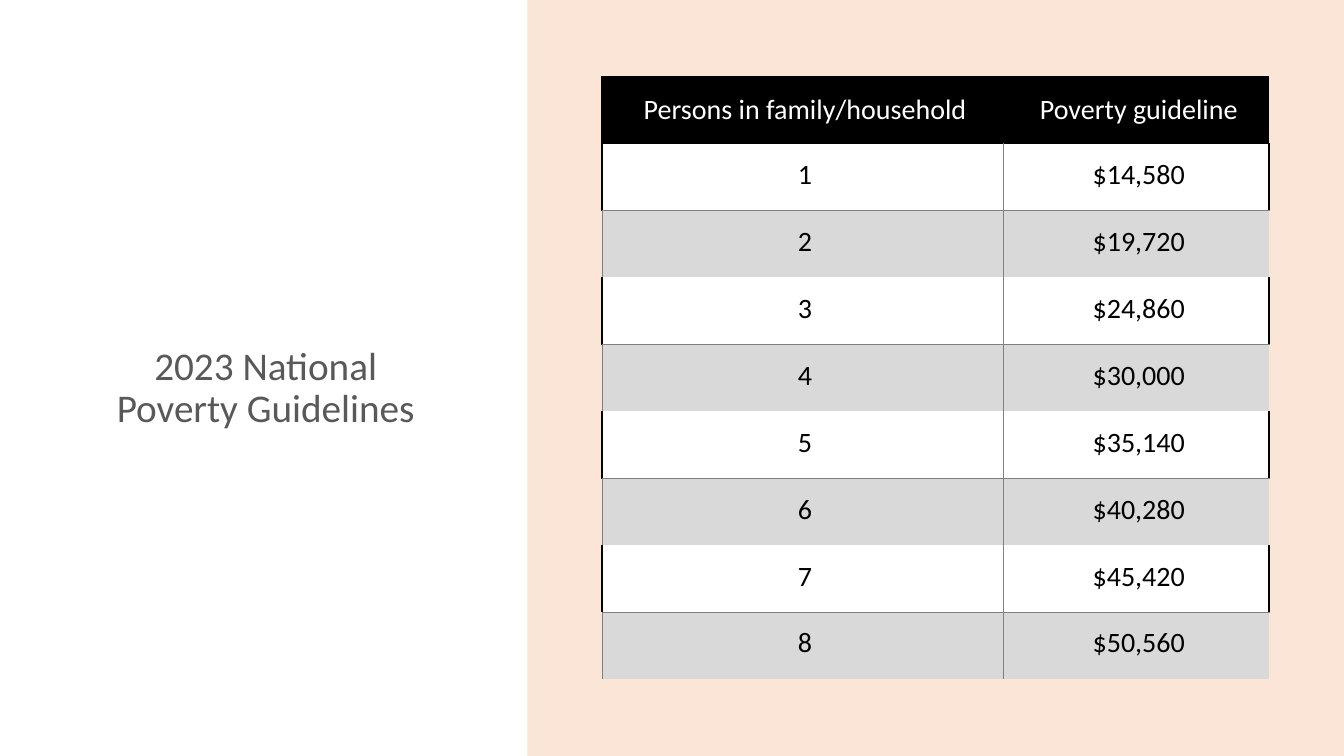
"""Build the 2023 National Poverty Guidelines slide."""
from lxml import etree
from pptx import Presentation
from pptx import util as u
from pptx.dml.color import RGBColor
from pptx.enum import shapes, text
from pptx.oxml.ns import qn

THEME = {
    "font": "Calibri", "title_size": 28, "table_size": 20,
    "title": "595959", "panel": "FBE5D6", "black": "000000",
    "white": "FFFFFF", "band": "D9D9D9", "grid": "808080",
}
THICK, THIN = (THEME["black"], 1.5), (THEME["grid"], 0.5)
NO_STYLE = "{2D5ABB26-0587-4C30-8999-92F81FD0307C}"
HEADERS = ("Persons in family/household", "Poverty guideline")
GUIDELINES = ("$14,580", "$19,720", "$24,860", "$30,000",
              "$35,140", "$40,280", "$45,420", "$50,560")
COLUMN_WIDTHS = (3.98, 2.64)
TABLE_HEIGHT = 5.98


def add_run(paragraph, words, size, color):
    paragraph.alignment = text.PP_ALIGN.CENTER
    run = paragraph.add_run()
    run.text = words
    run.font.name = THEME["font"]
    run.font.size = u.Pt(size)
    run.font.color.rgb = RGBColor.from_string(color)


def set_borders(cell, borders):
    properties = cell._tc.get_or_add_tcPr()
    for side in "LRTB":
        line = etree.SubElement(properties, qn(f"a:ln{side}"))
        if side in borders:
            color, width = borders[side]
            line.set("w", str(u.Pt(width)))
            fill = etree.SubElement(line, qn("a:solidFill"))
            etree.SubElement(fill, qn("a:srgbClr"), val=color)
        else:
            etree.SubElement(line, qn("a:noFill"))


presentation = Presentation()
presentation.slide_width = u.Inches(13.33)
presentation.slide_height = u.Inches(7.5)
slide = presentation.slides.add_slide(presentation.slide_layouts[5])

title = slide.shapes.title
title.left, title.top = u.Inches(1.02), u.Inches(0.74)
title.width, title.height = u.Inches(3.23), u.Inches(3.59)
title.text_frame.word_wrap = True
title.text_frame.vertical_anchor = text.MSO_ANCHOR.BOTTOM
title_paragraph = title.text_frame.paragraphs[0]
title_paragraph.line_spacing = 0.9
add_run(title_paragraph, "2023 National Poverty Guidelines",
        THEME["title_size"], THEME["title"])

panel_left = u.Inches(5.23)
panel = slide.shapes.add_shape(
    shapes.MSO_SHAPE.RECTANGLE, panel_left, 0,
    presentation.slide_width - panel_left, presentation.slide_height)
panel.shadow.inherit = False
panel.fill.solid()
panel.fill.fore_color.rgb = RGBColor.from_string(THEME["panel"])
panel.line.fill.background()

rows = [HEADERS] + [(str(n), amount) for n, amount in enumerate(GUIDELINES, 1)]
table = slide.shapes.add_table(
    len(rows), len(HEADERS), u.Inches(5.97), u.Inches(0.76),
    u.Inches(sum(COLUMN_WIDTHS)), u.Inches(TABLE_HEIGHT)).table
table._tbl.tblPr.find(qn("a:tableStyleId")).text = NO_STYLE
table.horz_banding = False
for column, width in zip(table.columns, COLUMN_WIDTHS):
    column.width = u.Inches(width)

for row_index, values in enumerate(rows):
    table.rows[row_index].height = u.Inches(TABLE_HEIGHT / len(rows))
    is_header, is_band = row_index == 0, row_index % 2 == 0
    for column_index, value in enumerate(values):
        is_first = column_index == 0
        if is_header:
            fill, color = THEME["black"], THEME["white"]
            borders = {"T": THICK, "B": THICK}
            if is_first:
                borders["L"] = THICK
        elif is_band:
            fill, color = THEME["band"], THEME["black"]
            borders = {"L": THIN, "T": THIN}
            if is_first:
                borders["R"] = THIN
        else:
            fill, color = THEME["white"], THEME["black"]
            borders = {"L": THICK if is_first else THIN,
                       "R": THIN if is_first else THICK, "B": THIN}
            if row_index == 1:
                borders["T"] = THICK
        cell = table.cell(row_index, column_index)
        set_borders(cell, borders)
        cell.fill.solid()
        cell.fill.fore_color.rgb = RGBColor.from_string(fill)
        cell.margin_left = u.Inches(0.19)
        cell.margin_right = cell.margin_top = cell.margin_bottom = u.Inches(0.14)
        cell.vertical_anchor = text.MSO_ANCHOR.MIDDLE if is_header else text.MSO_ANCHOR.TOP
        add_run(cell.text_frame.paragraphs[0], value, THEME["table_size"], color)

presentation.save("out.pptx")
